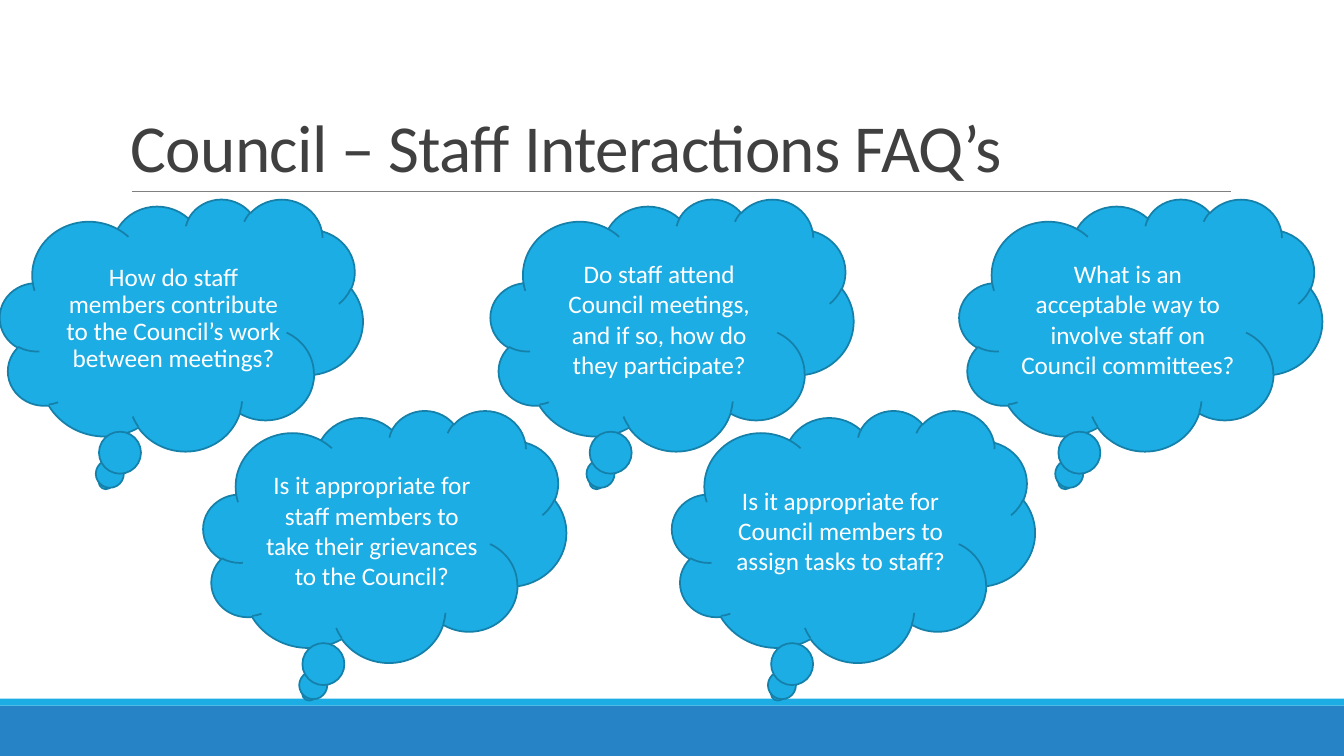
from dataclasses import dataclass

import pptx
import pptx.dml.color
import pptx.enum.shapes
import pptx.enum.text
import pptx.oxml.ns
import pptx.slide
import pptx.text.text
import pptx.util
from lxml import etree

Pt = pptx.util.Pt
RGBColor = pptx.dml.color.RGBColor
MSO_SHAPE = pptx.enum.shapes.MSO_SHAPE
MSO_ANCHOR = pptx.enum.text.MSO_ANCHOR
PP_ALIGN = pptx.enum.text.PP_ALIGN
qn = pptx.oxml.ns.qn

WHITE = RGBColor(0xFF, 0xFF, 0xFF)
SKY = RGBColor(0x1C, 0xAD, 0xE4)
BLUE = RGBColor(0x26, 0x83, 0xC6)
OUTLINE = RGBColor(0x15, 0x80, 0xA9)
GREY = RGBColor(0x80, 0x80, 0x80)
DARK = RGBColor(0x40, 0x40, 0x40)

FONT = "Calibri"
SLIDE_W, SLIDE_H = 960, 540
CLOUD_W, CLOUD_H = 259.2, 180
TOP_ROW, BOTTOM_ROW = 142, 293


@dataclass(frozen=True)
class Bar:
    top: float
    height: float
    color: RGBColor


@dataclass(frozen=True)
class Cloud:
    left: float
    top: float
    question: str
    compact: bool = False


BARS = [Bar(504, 36, BLUE), Bar(499, 5, SKY)]

CLOUDS = [
    Cloud(0, TOP_ROW, "How do staff members contribute to the Council’s work between meetings?",
          compact=True),
    Cloud(350.5, TOP_ROW, "Do staff attend Council meetings, and if so, how do they participate?"),
    Cloud(685.3, TOP_ROW, "What is an acceptable way to involve staff on Council committees?"),
    Cloud(145.3, BOTTOM_ROW,
          "Is it appropriate for staff members to take their grievances to the Council?"),
    Cloud(480.1, BOTTOM_ROW, "Is it appropriate for Council members to assign tasks to staff?"),
]


def format_run(r: pptx.text.text._Run, size: float, color: RGBColor) -> None:
    r.font.name = FONT
    r.font.size = Pt(size)
    r.font.color.rgb = color


def add_bar(s: pptx.slide.Slide, bar: Bar) -> None:
    sp = s.shapes.add_shape(MSO_SHAPE.RECTANGLE, Pt(0), Pt(bar.top), Pt(SLIDE_W), Pt(bar.height))
    sp.shadow.inherit = False
    sp.fill.solid()
    sp.fill.fore_color.rgb = bar.color
    sp.line.fill.background()


def add_title(s: pptx.slide.Slide, title: str) -> None:
    """Add the title and the thin rule below it."""
    rule = s.shapes.add_connector(pptx.enum.shapes.MSO_CONNECTOR.STRAIGHT,
                                  Pt(94.3), Pt(136.8), Pt(879.1), Pt(136.8))
    rule.line.color.rgb = GREY
    rule.line.width = Pt(0.5)
    etree.SubElement(rule._element.spPr, qn("a:effectLst"))

    tf = s.shapes.add_textbox(Pt(86.4), Pt(22.6), Pt(792), Pt(114.2)).text_frame
    tf.word_wrap = True
    tf.vertical_anchor = MSO_ANCHOR.BOTTOM
    tf.text = title
    p = tf.paragraphs[0]
    p.line_spacing = 0.85
    r = p.runs[0]
    format_run(r, 48, DARK)
    r._r.get_or_add_rPr().set("spc", "-50")


def add_cloud(s: pptx.slide.Slide, cloud: Cloud) -> None:
    sp = s.shapes.add_shape(MSO_SHAPE.CLOUD_CALLOUT, Pt(cloud.left), Pt(cloud.top),
                            Pt(CLOUD_W), Pt(CLOUD_H))
    sp.shadow.inherit = False
    sp.fill.solid()
    sp.fill.fore_color.rgb = SKY
    sp.line.color.rgb = OUTLINE
    sp.line.width = Pt(1.25)

    tf = sp.text_frame
    tf.word_wrap = True
    tf.vertical_anchor = MSO_ANCHOR.MIDDLE
    tf.text = cloud.question
    p = tf.paragraphs[0]
    p.alignment = PP_ALIGN.CENTER
    format_run(p.runs[0], 18, WHITE)
    if cloud.compact:
        tf.margin_left = tf.margin_right = Pt(0)
        p.line_spacing = 0.9
        p.space_before = Pt(12)
        p.space_after = Pt(2)
        p._p.get_or_add_pPr().set("marL", str(Pt(7.2)))


def main() -> None:
    prs = pptx.Presentation()
    prs.slide_width, prs.slide_height = Pt(SLIDE_W), Pt(SLIDE_H)
    s = prs.slides.add_slide(prs.slide_layouts[6])
    s.background.fill.solid()
    s.background.fill.fore_color.rgb = WHITE
    for bar in BARS:
        add_bar(s, bar)
    add_title(s, "Council – Staff Interactions FAQ’s")
    for cloud in CLOUDS:
        add_cloud(s, cloud)
    prs.save("out.pptx")


if __name__ == "__main__":
    main()
